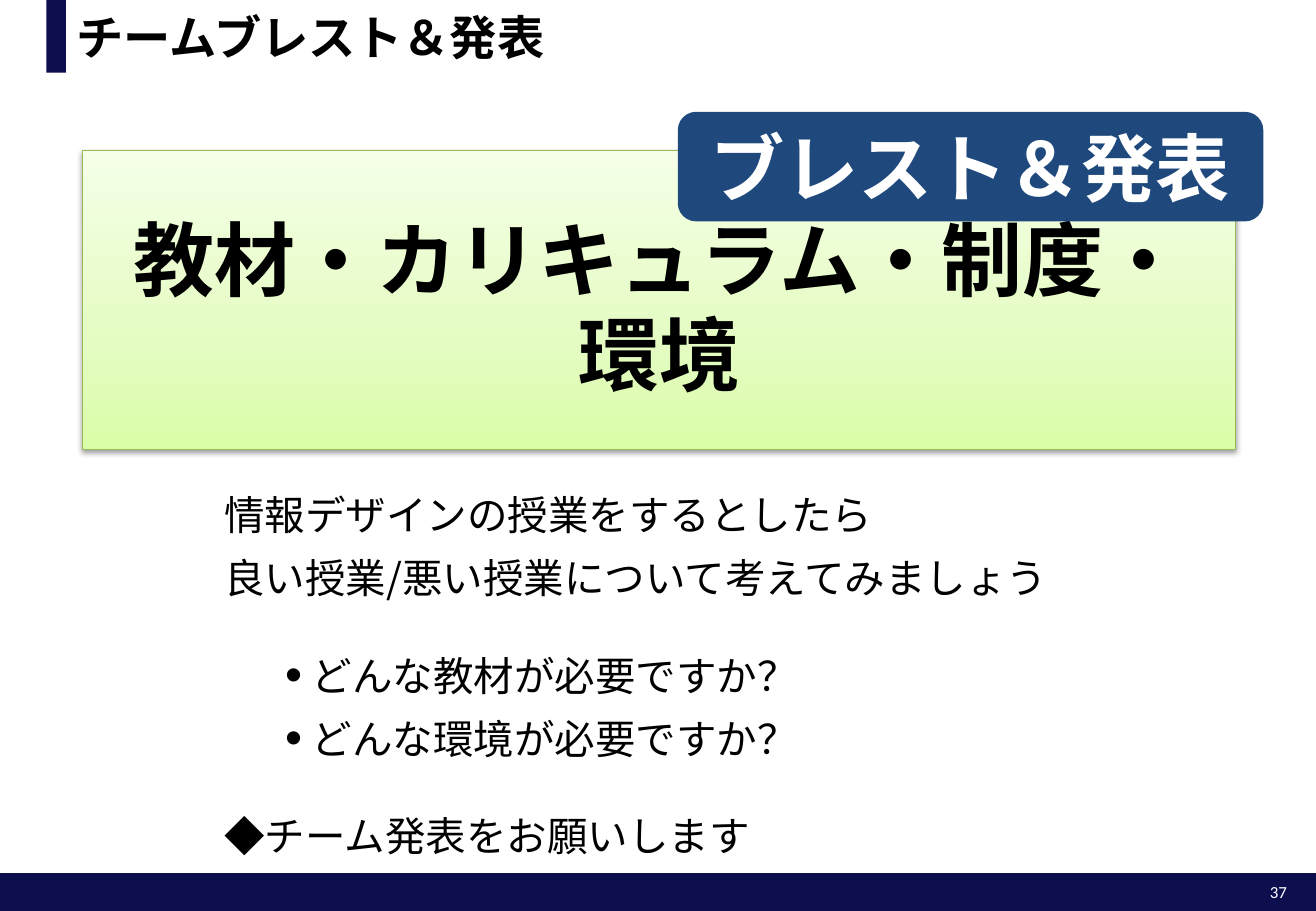
from dataclasses import dataclass
from typing import Optional

from lxml.etree import SubElement
from pptx import Presentation
from pptx.dml.color import RGBColor
from pptx.enum.shapes import MSO_SHAPE as Preset
from pptx.enum.text import MSO_ANCHOR as Anchor, MSO_AUTO_SIZE as AutoSize, PP_ALIGN as Align
from pptx.oxml.ns import qn
from pptx.util import Cm, Pt

COLOURS = {
    "navy": "0C0E4E", "blue": "1F497D", "white": "FFFFFF", "black": "000000",
    "green_line": "98B955",
    "green_deep": "DAFDA7", "green_mid": "E4FCC2", "green_pale": "F5FFE7",
}
JAPANESE = "Noto Sans CJK JP"


@dataclass
class Area:
    left: float
    top: float
    width: float
    height: float

    def lengths(self):
        return Cm(self.left), Cm(self.top), Cm(self.width), Cm(self.height)


@dataclass
class Line:
    text: str
    spacing: float
    bullet: bool = False


PAGE = Area(0, 0, 27.51, 19.05)
BANDS = [Area(0, 18.26, 27.51, 0.79), Area(0.97, 0, 0.41, 1.52)]
TITLE = Area(1.35, 0, 25.81, 1.52)
TOPIC = Area(1.73, 3.15, 24.1, 6.25)
BADGE = Area(14.17, 2.34, 12.24, 2.29)
BODY = Area(4.39, 9.75, 18.72, 8.33)
NUMBER = Area(26.11, 18.31, 1.04, 0.69)

NARROW, WIDE = 37.4, 57.6
BODY_LINES = [
    Line("情報デザインの授業をするとしたら", NARROW),
    Line("良い授業/悪い授業について考えてみましょう", NARROW),
    Line("どんな教材が必要ですか？", WIDE, bullet=True),
    Line("どんな環境が必要ですか？", NARROW, bullet=True),
    Line("◆チーム発表をお願いします", WIDE),
]


def colour(name: str) -> RGBColor:
    return RGBColor.from_string(COLOURS[name])


def write(para, text: str, *, size: float, font: str = JAPANESE, ink: str = "black",
          bold: bool = False, align=Align.LEFT, spacing: Optional[float] = None) -> None:
    """Put one formatted span into a paragraph."""
    para.alignment = align
    if spacing:
        para.line_spacing = Pt(spacing)
    span = para.add_run()
    span.text = text
    span.font.size, span.font.bold, span.font.name = Pt(size), bold, font
    span.font.color.rgb = colour(ink)
    east_asian = SubElement(span.font._element, qn("a:ea"))
    east_asian.set("typeface", JAPANESE)


def add_box(page, area: Area, fill: str, preset=Preset.RECTANGLE):
    box = page.shapes.add_shape(preset, *area.lengths())
    box.shadow.inherit = False
    box.fill.solid()
    box.fill.fore_color.rgb = colour(fill)
    box.line.fill.background()
    box.text_frame.word_wrap = True
    box.text_frame.vertical_anchor = Anchor.MIDDLE
    return box


def add_text_box(page, area: Area):
    frame = page.shapes.add_textbox(*area.lengths()).text_frame
    frame.word_wrap = True
    return frame


def add_colour(parent, name: str):
    node = SubElement(parent, qn("a:srgbClr"))
    node.set("val", COLOURS[name])
    return node


def shade_topic(box) -> None:
    """Give the topic box its green gradient, thin edge and soft shadow."""
    box.fill.gradient()
    box.fill.gradient_angle = 90
    stops = box._element.spPr.find(qn("a:gradFill")).find(qn("a:gsLst"))
    for stop in list(stops):
        stops.remove(stop)
    for percent, name in ((0, "green_deep"), (35, "green_mid"), (100, "green_pale")):
        stop = SubElement(stops, qn("a:gs"))
        stop.set("pos", str(percent * 1000))
        add_colour(stop, name)
    box.line.color.rgb = colour("green_line")
    box.line.width = Pt(0.75)

    effects = box._element.spPr.find(qn("a:effectLst"))
    shadow = SubElement(effects, qn("a:outerShdw"))
    for key, value in (("blurRad", Pt(3.1)), ("dist", Pt(1.6)), ("dir", 90 * 60000),
                       ("rotWithShape", 0)):
        shadow.set(key, str(int(value)))
    SubElement(add_colour(shadow, "black"), qn("a:alpha")).set("val", "38000")


def add_bullet(para) -> None:
    para.level = 1
    properties = para._p.get_or_add_pPr()
    properties.set("marL", str(Cm(1.83)))
    properties.set("indent", str(Cm(-0.56)))
    SubElement(properties, qn("a:buSzPct")).set("val", "120000")
    SubElement(properties, qn("a:buFont")).set("typeface", "Arial")
    SubElement(properties, qn("a:buChar")).set("char", "•")


def add_body(page) -> None:
    frame = add_text_box(page, BODY)
    frame.margin_left = frame.margin_right = Cm(0.3)
    frame.margin_top = frame.margin_bottom = Cm(0.2)
    for index, line in enumerate(BODY_LINES):
        para = frame.add_paragraph() if index else frame.paragraphs[0]
        write(para, line.text, size=24, spacing=line.spacing)
        if line.bullet:
            add_bullet(para)


def main() -> None:
    deck = Presentation()
    deck.slide_width, deck.slide_height = Cm(PAGE.width), Cm(PAGE.height)
    page = deck.slides.add_slide(deck.slide_layouts[5])

    # Navy footer and title marker, with the page number
    for band in BANDS:
        add_box(page, band, "navy")
    number = add_text_box(page, NUMBER)
    write(number.paragraphs[0], "37", size=10, font="Calibri", ink="white", align=Align.RIGHT)

    # Title
    title = page.shapes.title
    title.left, title.top, title.width, title.height = TITLE.lengths()
    title.text_frame.auto_size = AutoSize.NONE
    title.text_frame.vertical_anchor = Anchor.MIDDLE
    write(title.text_frame.paragraphs[0], "チームブレスト＆発表", size=28, font="Arial", bold=True)

    # Topic
    topic = add_box(page, TOPIC, "green_pale")
    shade_topic(topic)
    topic.text_frame.margin_top = Cm(0.42)
    write(topic.text_frame.paragraphs[0], "教材・カリキュラム・制度・環境", size=48,
          bold=True, align=Align.CENTER, spacing=56.3)

    # Questions
    add_body(page)

    # Badge over the topic's corner
    badge = add_box(page, BADGE, "blue", Preset.ROUNDED_RECTANGLE)
    write(badge.text_frame.paragraphs[0], "ブレスト＆発表", size=44, ink="white",
          bold=True, align=Align.CENTER)

    deck.save("out.pptx")


if __name__ == "__main__":
    main()
